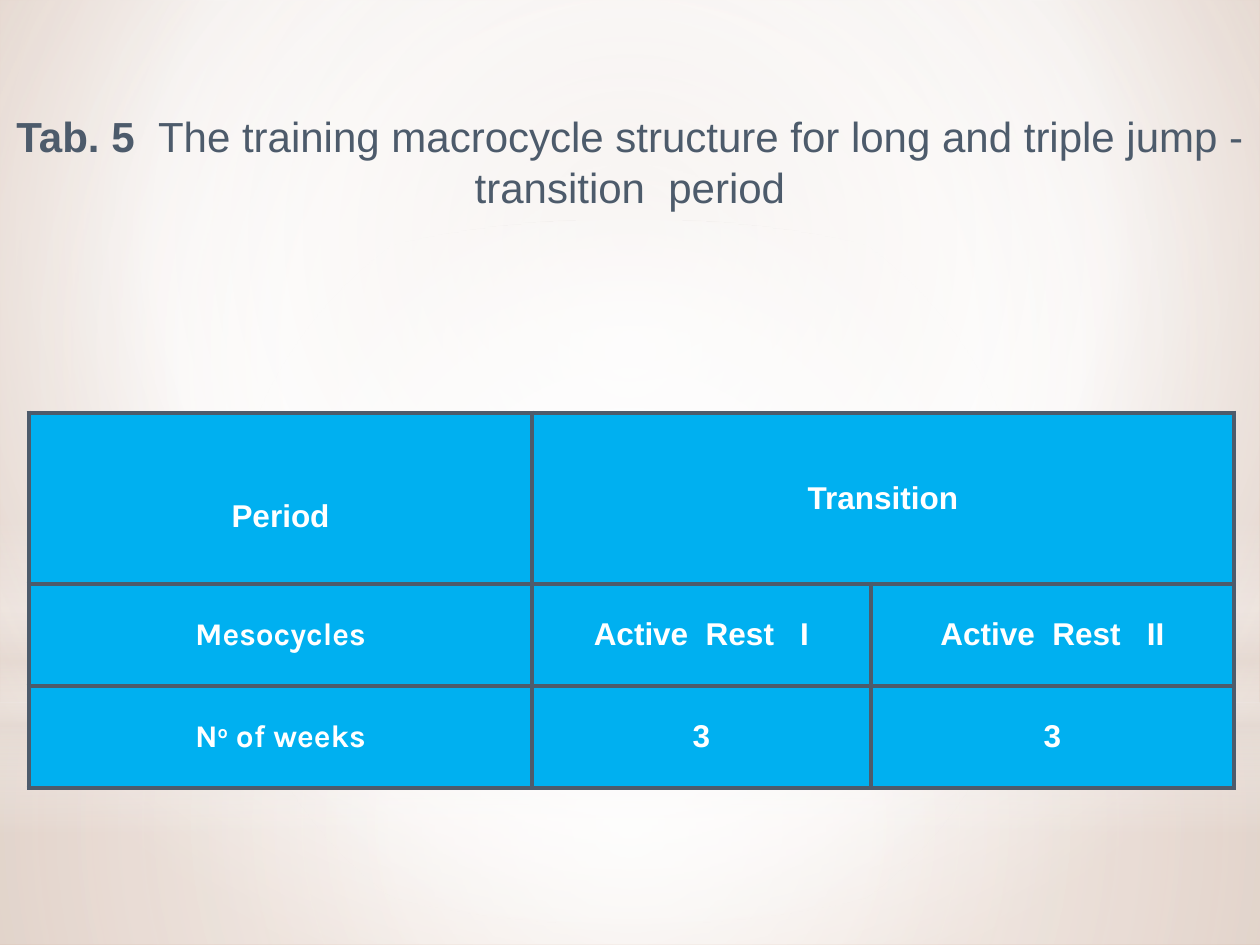
"""Build the transition period table slide for long and triple jump."""
from lxml.etree import SubElement
from pptx import Presentation
from pptx.dml.color import RGBColor
from pptx.enum.shapes import MSO_SHAPE
from pptx.enum.text import MSO_ANCHOR, PP_ALIGN
from pptx.oxml.ns import qn
from pptx.util import Pt

SCALE = 914400 / 126
SLATE, WHITE, BLUE, SAND = "4D5B6B", "FFFFFF", "00B0F0", "E8DED8"
CENTRE = (50, 50, 50, 50)

BACKDROP = {"stops": [(0, "E3D4CB", 100), (60, WHITE, 100), (100, "CFAD99", 100)],
            "focus": (20, 10, 20, 60)}
GLOWS = [
    (MSO_SHAPE.RECTANGLE, (0, 703, 1260, 242),
     {"stops": [(0, WHITE, 91), (37, WHITE, 76), (100, SAND, 79)], "focus": CENTRE}),
    (MSO_SHAPE.RECTANGLE, (0, 0, 1260, 703),
     {"stops": [(0, WHITE, 89), (48, WHITE, 62), (100, SAND, 79)], "focus": CENTRE}),
    (MSO_SHAPE.RECTANGLE, (0, 519, 1260, 315),
     {"stops": [(0, WHITE, 0), (29, WHITE, 30), (45, SAND, 40), (55, WHITE, 26),
                (65, SAND, 60), (100, WHITE, 0)], "angle": 90}),
    (MSO_SHAPE.OVAL, (0, 220, 1260, 703),
     {"stops": [(0, WHITE, 100), (56, WHITE, 0)], "focus": CENTRE}),
]

TITLE_BOX = (0, 103, 1260, 165)
TITLE = [("Tab. 5  ", {"bold": True}),
         ("The training macrocycle structure for long and triple jump - transition  period",
          {"bold": False})]
TITLE_FORMAT = {"size": Pt(24), "name": "Arial"}

TABLE_CORNER = (29, 413)
COLUMNS = [503, 339, 363]
ROWS = [171, 102, 102]
KARLA = {"name": "Karla"}
CELLS = [
    [[("Period", {})], [("Transition", {})], []],
    [[("Mesocycles", KARLA)], [("Active  Rest   I", {})], [("Active  Rest   II", {})]],
    [[("N", KARLA), ("o", {**KARLA, "raised": 30}), (" of weeks", KARLA)],
     [("3", {})], [("3", {})]],
]
CELL_FORMAT = {"size": Pt(18), "name": "Arial", "bold": True}


def px(length):
    return round(length * SCALE)


def colour(value):
    return RGBColor.from_string(value)


def add_gradient(holder, stops, focus=None, angle=0):
    solid = holder.find(qn("a:solidFill"))
    gradient = holder.makeelement(qn("a:gradFill"), {"rotWithShape": "1"})
    stop_list = SubElement(gradient, qn("a:gsLst"))
    for place, value, opacity in stops:
        stop = SubElement(stop_list, qn("a:gs"), pos=str(place * 1000))
        tint = SubElement(stop, qn("a:srgbClr"), val=value)
        if opacity < 100:
            SubElement(tint, qn("a:alpha"), val=str(opacity * 1000))
    if focus:
        circle = SubElement(gradient, qn("a:path"), path="circle")
        SubElement(circle, qn("a:fillToRect"),
                   {side: str(share * 1000) for side, share in zip("ltrb", focus)})
    else:
        SubElement(gradient, qn("a:lin"), ang=str(angle * 60000), scaled="0")
    holder.replace(solid, gradient)


def write(frame, pieces, base, ink):
    paragraph = frame.paragraphs[0]
    paragraph.alignment = PP_ALIGN.CENTER
    for text, changes in pieces:
        run = paragraph.add_run()
        run.text = text
        run.font.color.rgb = colour(ink)
        look = {**base, **changes}
        raised = look.pop("raised", 0)
        for key, value in look.items():
            setattr(run.font, key, value)
        if raised:
            run.font._element.set("baseline", str(raised * 1000))


def add_borders(cell):
    properties = cell._tc.get_or_add_tcPr()
    for position, side in enumerate(("lnL", "lnR", "lnT", "lnB")):
        border = properties.makeelement(qn(f"a:{side}"), {"w": str(Pt(3))})
        fill = SubElement(border, qn("a:solidFill"))
        SubElement(fill, qn("a:srgbClr"), val=SLATE)
        properties.insert(position, border)


def add_glows(slide):
    slide.background.fill.solid()
    add_gradient(slide.element.find(".//" + qn("p:bgPr")), **BACKDROP)
    for outline, box, gradient in GLOWS:
        glow = slide.shapes.add_shape(outline, *map(px, box))
        glow.shadow.inherit = False
        glow.line.fill.background()
        glow.fill.solid()
        add_gradient(glow.element.spPr, **gradient)


def add_title(slide):
    frame = slide.shapes.add_textbox(*map(px, TITLE_BOX)).text_frame
    layout = {"word_wrap": True, "vertical_anchor": MSO_ANCHOR.MIDDLE,
              "margin_bottom": px(55)}
    for key, value in layout.items():
        setattr(frame, key, value)
    write(frame, TITLE, TITLE_FORMAT, SLATE)


def add_plan(slide):
    extent = (*TABLE_CORNER, sum(COLUMNS), sum(ROWS))
    plan = slide.shapes.add_table(len(ROWS), len(COLUMNS), *map(px, extent)).table
    for column, width in zip(plan.columns, COLUMNS):
        column.width = px(width)
    for row, height, contents in zip(plan.rows, ROWS, CELLS):
        row.height = px(height)
        for cell, pieces in zip(row.cells, contents):
            cell.fill.solid()
            cell.fill.fore_color.rgb = colour(BLUE)
            cell.vertical_anchor = MSO_ANCHOR.MIDDLE
            add_borders(cell)
            write(cell.text_frame, pieces, CELL_FORMAT, WHITE)
    plan.cell(0, 0).margin_top = px(42)
    plan.cell(0, 1).merge(plan.cell(0, 2))


def main():
    deck = Presentation()
    deck.slide_width, deck.slide_height = px(1260), px(945)
    slide = deck.slides.add_slide(deck.slide_layouts[6])
    add_glows(slide)
    add_title(slide)
    add_plan(slide)
    deck.save("out.pptx")


if __name__ == "__main__":
    main()
